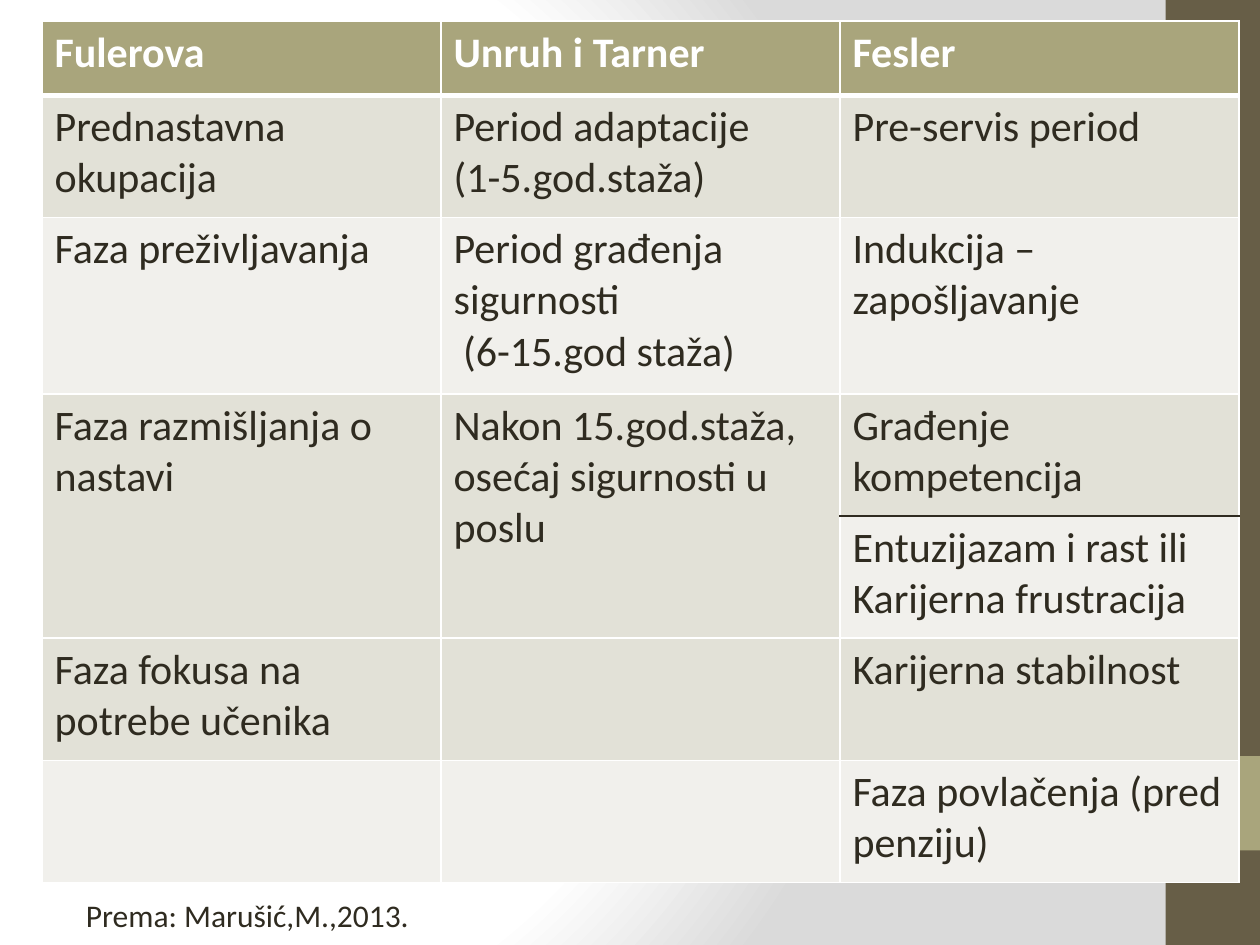
from dataclasses import dataclass

from pptx import Presentation
from pptx import oxml
from pptx.dml.color import RGBColor
from pptx.enum import shapes, text
from pptx.oxml import ns
from pptx.util import Pt

COLORS = {
    "white": "FFFFFF",
    "ink": "2F2B20",
    "brown": "675E47",
    "olive": "A9A57C",
    "band": "E2E1D7",
    "pale": "F1F0EC",
    "mist": "DADADA",
}
FONT = "Calibri"
COL_WIDTH = 228
ROW_HEIGHTS = [42.5, 69.8, 100.8, 69.8, 69.8, 69.8, 69.8]
PHASES = [
    ["Fulerova", "Unruh i Tarner", "Fesler"],
    ["Prednastavna okupacija", "Period adaptacije\n(1-5.god.staža)", "Pre-servis period"],
    ["Faza preživljavanja", "Period građenja sigurnosti\n (6-15.god staža)",
     "Indukcija – zapošljavanje"],
    ["Faza razmišljanja o nastavi", "Nakon 15.god.staža, osećaj sigurnosti u poslu",
     "Građenje kompetencija"],
    ["", "", "Entuzijazam i rast ili\nKarijerna frustracija"],
    ["Faza fokusa na potrebe učenika", "", "Karijerna stabilnost"],
    ["", "", "Faza povlačenja (pred penziju)"],
]


@dataclass
class Bar:
    left: float
    top: float
    width: float
    height: float
    color: str


BARS = [Bar(666, 0, 54, 540, "brown"), Bar(666, 432, 54, 54, "olive")]


def rgb(name: str) -> RGBColor:
    return RGBColor.from_string(COLORS[name])


def set_background(s) -> None:
    s.background.fill.solid()
    solid = s._element.find(".//" + ns.qn("a:solidFill"))
    stops = "".join(
        f'<a:gs pos="{pos * 1000}"><a:srgbClr val="{COLORS[name]}"/></a:gs>'
        for pos, name in [(0, "white"), (75, "white"), (100, "mist")]
    )
    gradient = oxml.parse_xml(
        f'<a:gradFill {ns.nsdecls("a")} rotWithShape="1"><a:gsLst>{stops}</a:gsLst>'
        '<a:path path="circle">'
        '<a:fillToRect l="20000" t="50000" r="100000" b="50000"/></a:path></a:gradFill>'
    )
    solid.getparent().replace(solid, gradient)


def add_bar(s, bar: Bar) -> None:
    sp = s.shapes.add_shape(
        shapes.MSO_SHAPE.RECTANGLE,
        Pt(bar.left), Pt(bar.top), Pt(bar.width), Pt(bar.height),
    )
    sp.shadow.inherit = False
    sp.fill.solid()
    sp.fill.fore_color.rgb = rgb(bar.color)
    sp.line.fill.background()


def format_text(tf, size: float, color: str, bold: bool = False) -> None:
    for p in tf.paragraphs:
        for r in p.runs:
            r.font.name = FONT
            r.font.size = Pt(size)
            r.font.bold = bold
            r.font.color.rgb = rgb(color)


def add_border(cell, side: str, color: str, width: float) -> None:
    cell._tc.get_or_add_tcPr().append(oxml.parse_xml(
        f'<a:ln{side} {ns.nsdecls("a")} w="{Pt(width)}"><a:solidFill>'
        f'<a:srgbClr val="{COLORS[color]}"/></a:solidFill></a:ln{side}>'
    ))


def format_cell(cell, row: int, col: int) -> None:
    header = row == 0
    cell.text_frame.text = PHASES[row][col]
    format_text(cell.text_frame, 24, "white" if header else "ink", header)
    dark_side = {(3, 2): "B", (4, 2): "T"}.get((row, col))
    for side in "LRTB":
        thick = (header and side == "B") or (row == 1 and side == "T")
        add_border(cell, side, "ink" if side == dark_side else "white", 3 if thick else 1)
    cell.fill.solid()
    cell.fill.fore_color.rgb = rgb("olive" if header else "band" if row % 2 else "pale")


def add_phase_table(s) -> None:
    rows, cols = len(PHASES), len(PHASES[0])
    table = s.shapes.add_table(
        rows, cols, Pt(24), Pt(12), Pt(COL_WIDTH * cols), Pt(sum(ROW_HEIGHTS))
    ).table
    for column in table.columns:
        column.width = Pt(COL_WIDTH)
    for row, height in enumerate(ROW_HEIGHTS):
        table.rows[row].height = Pt(height)
        for col in range(cols):
            format_cell(table.cell(row, col), row, col)
    for col in range(2):
        table.cell(3, col).merge(table.cell(4, col))


def add_citation(s) -> None:
    tf = s.shapes.add_textbox(Pt(42), Pt(508.5), Pt(201), Pt(29)).text_frame
    tf.word_wrap = False
    tf.auto_size = text.MSO_AUTO_SIZE.SHAPE_TO_FIT_TEXT
    tf.text = "Prema: Marušić,M.,2013."
    format_text(tf, 18, "ink")


def main() -> None:
    prs = Presentation()
    prs.slide_width, prs.slide_height = Pt(720), Pt(540)
    s = prs.slides.add_slide(prs.slide_layouts[6])
    set_background(s)
    for bar in BARS:
        add_bar(s, bar)
    add_phase_table(s)
    add_citation(s)
    prs.save("out.pptx")


if __name__ == "__main__":
    main()
